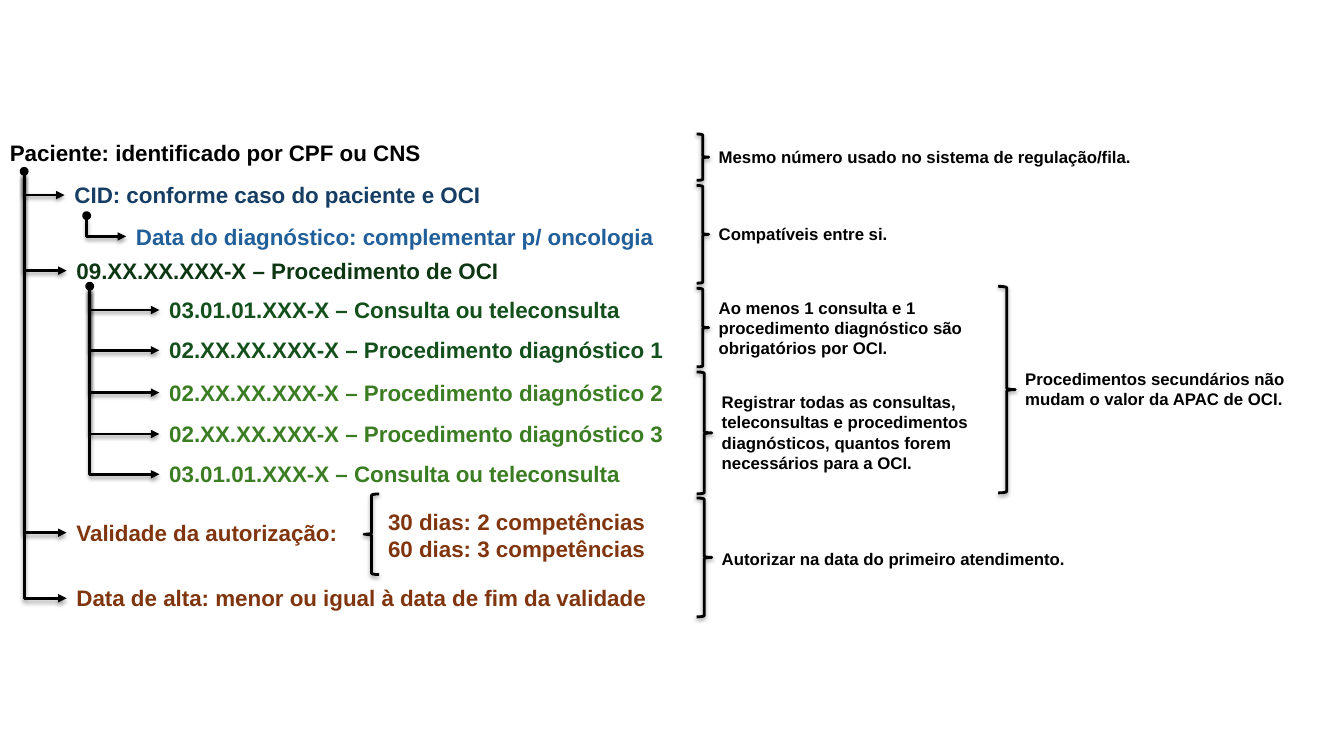
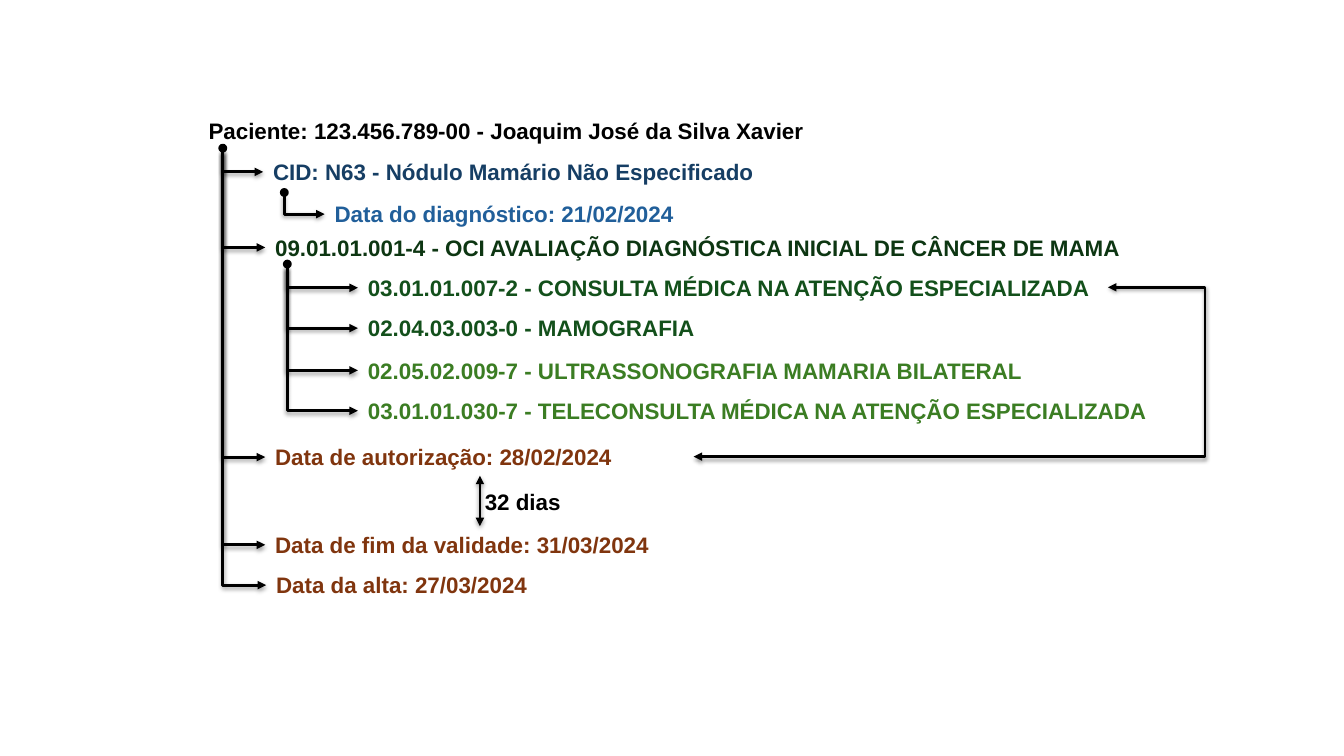
from dataclasses import dataclass

from lxml import etree
from pptx import Presentation
from pptx import util as u
from pptx.dml.color import RGBColor
from pptx.enum import shapes, text
from pptx.oxml.ns import qn

PX = 9144
FONT = "Arial"
DOT = 6
BOTTOM_OF_DOT, LEFT_SIDE, RIGHT_SIDE = 4, 1, 3

BLACK = RGBColor(0x00, 0x00, 0x00)
NAVY = RGBColor(0x16, 0x3E, 0x64)
BLUE = RGBColor(0x21, 0x5F, 0x9A)
DEEP_GREEN = RGBColor(0x0D, 0x36, 0x12)
GREEN = RGBColor(0x13, 0x50, 0x1B)
LIGHT_GREEN = RGBColor(0x3B, 0x7D, 0x23)
BROWN = RGBColor(0x80, 0x35, 0x0E)


@dataclass(frozen=True)
class Label:
    text: str
    x: int
    y: int
    w: int
    color: RGBColor
    wrap: bool = False


@dataclass(frozen=True)
class Branch:
    x: int
    y: int
    labels: tuple[Label, ...]


@dataclass(frozen=True)
class Note:
    text: str
    x: int
    y: int
    w: int
    h: int
    brace_y: int
    brace_w: int
    brace_h: int


def emu(px: float) -> u.Emu:
    return u.Emu(round(px * PX))


def add_text(s, content: str, *, x: int, y: int, w: int, h: int = 37,
             size: int = 16, color: RGBColor = BLACK, wrap: bool = False):
    sp = s.shapes.add_textbox(emu(x), emu(y), emu(w), emu(h))
    tf = sp.text_frame
    tf.word_wrap = wrap
    tf.auto_size = text.MSO_AUTO_SIZE.SHAPE_TO_FIT_TEXT
    for i, line in enumerate(content.split("\n")):
        p = tf.paragraphs[0] if i == 0 else tf.add_paragraph()
        r = p.add_run()
        r.text = line
        r.font.name = FONT
        r.font.size = u.Pt(size)
        r.font.bold = True
        r.font.color.rgb = color
    return sp


def add_label(s, label: Label):
    return add_text(s, label.text, x=label.x, y=label.y, w=label.w,
                    color=label.color, wrap=label.wrap)


def ink(sp) -> None:
    sp.line.color.rgb = BLACK
    sp.line.width = u.Pt(2)


def add_shadow(sp) -> None:
    effects = etree.SubElement(sp._element.spPr, qn("a:effectLst"))
    shadow = etree.SubElement(
        effects, qn("a:outerShdw"), blurRad=str(u.Pt(3.1)),
        dist=str(u.Pt(1.6)), dir="5400000", rotWithShape="0")
    color = etree.SubElement(shadow, qn("a:srgbClr"), val=str(BLACK))
    etree.SubElement(color, qn("a:alpha"), val="38000")


def add_arrow(s, kind, x1: float, y1: float, x2: float, y2: float,
              both_ends: bool = False):
    c = s.shapes.add_connector(kind, emu(x1), emu(y1), emu(x2), emu(y2))
    ink(c)
    ln = c._element.spPr.get_or_add_ln()
    for tag in ("a:headEnd", "a:tailEnd") if both_ends else ("a:tailEnd",):
        etree.SubElement(ln, qn(tag), type="triangle")
    add_shadow(c)
    return c


def glue(c, start, start_site: int, end, end_site: int) -> None:
    links = c._element.find(qn("p:nvCxnSpPr")).find(qn("p:cNvCxnSpPr"))
    for tag, sp, site in (("a:stCxn", start, start_site),
                          ("a:endCxn", end, end_site)):
        etree.SubElement(links, qn(tag), id=str(sp.shape_id), idx=str(site))


def add_corner_arrow(s, x1: float, y1: float, x2: float, y2: float):
    cx, cy = (x1 + x2) / 2, (y1 + y2) / 2
    half_w, half_h = (y2 - y1) / 2, (x2 - x1) / 2
    c = add_arrow(s, shapes.MSO_CONNECTOR.ELBOW, cx + half_w, cy - half_h,
                  cx - half_w, cy + half_h)
    spPr = c._element.spPr
    spPr.find(qn("a:xfrm")).set("rot", "16200000")
    spPr.find(qn("a:prstGeom")).set("prst", "bentConnector2")
    return c


def add_branch(s, branch: Branch) -> list:
    dot = s.shapes.add_shape(shapes.MSO_SHAPE.OVAL, emu(branch.x),
                             emu(branch.y), emu(DOT), emu(DOT))
    dot.fill.solid()
    dot.fill.fore_color.rgb = BLACK
    ink(dot)
    dot.shadow.inherit = False
    boxes = []
    for label in branch.labels:
        box = add_label(s, label)
        c = add_corner_arrow(s, branch.x + DOT / 2, branch.y + DOT,
                             label.x, label.y + 18.5)
        glue(c, dot, BOTTOM_OF_DOT, box, LEFT_SIDE)
        boxes.append(box)
    return boxes


def add_brace(s, x: int, y: int, w: int, h: int, rotation: int = 0) -> None:
    sp = s.shapes.add_shape(shapes.MSO_SHAPE.RIGHT_BRACE, emu(x), emu(y),
                            emu(w), emu(h))
    sp.rotation = rotation
    sp.fill.background()
    ink(sp)
    add_shadow(sp)


def add_note(s, note: Note) -> None:
    add_brace(s, note.x - note.brace_w, note.brace_y, note.brace_w,
              note.brace_h)
    add_text(s, note.text, x=note.x, y=note.y, w=note.w, h=note.h, size=12,
             wrap=True)


RULES_BRANCHES = (
    Branch(21, 167, (
        Label("CID: conforme caso do paciente e OCI", 64, 175, 428, NAVY),
        Label("09.XX.XX.XXX-X – Procedimento de OCI", 66, 250, 444, DEEP_GREEN),
        Label("Validade da autorização:", 66, 510, 282, BROWN),
        Label("Data de alta: menor ou igual à data de fim da validade",
              66, 575, 593, BROWN),
    )),
    Branch(83, 211, (
        Label("Data do diagnóstico: complementar p/ oncologia",
              125, 216, 540, BLUE),
    )),
    Branch(86, 281, (
        Label("03.01.01.XXX-X – Consulta ou teleconsulta", 158, 289, 473, GREEN),
        Label("02.XX.XX.XXX-X – Procedimento diagnóstico 1",
              158, 329, 516, GREEN),
        Label("02.XX.XX.XXX-X – Procedimento diagnóstico 2",
              158, 371, 516, LIGHT_GREEN),
        Label("02.XX.XX.XXX-X – Procedimento diagnóstico 3",
              158, 412, 516, LIGHT_GREEN),
        Label("03.01.01.XXX-X – Consulta ou teleconsulta",
              158, 452, 473, LIGHT_GREEN),
    )),
)

RULES_NOTES = (
    Note("Mesmo número usado no sistema de regulação/fila.",
         703, 141, 453, 30, 133, 12, 46),
    Note("Compatíveis entre si.", 703, 217, 301, 30, 184, 12, 97),
    Note("Ao menos 1 consulta e 1 procedimento diagnóstico são obrigatórios "
         "por OCI.", 703, 290, 301, 71, 286, 12, 78),
    Note("Registrar todas as consultas, teleconsultas e procedimentos "
         "diagnósticos, quantos forem necessários para a OCI.",
         706, 384, 301, 91, 369, 15, 121),
    Note("Autorizar na data do primeiro atendimento.",
         706, 539, 362, 30, 494, 15, 118),
    Note("Procedimentos secundários não mudam o valor da APAC de OCI.",
         1007, 361, 316, 50, 284, 17, 205),
)

CASE_MAIN = Branch(218, 144, (
    Label("CID: N63 - Nódulo Mamário Não Especificado", 261, 152, 503, NAVY),
    Label("09.01.01.001-4 - OCI AVALIAÇÃO DIAGNÓSTICA INICIAL DE CÂNCER DE MAMA",
          263, 227, 868, DEEP_GREEN),
    Label("Data de autorização: 28/02/2024", 263, 435, 426, BROWN, True),
    Label("Data de fim da validade: 31/03/2024", 263, 522, 426, BROWN, True),
    Label("Data da alta: 27/03/2024", 264, 562, 425, BROWN, True),
))
CASE_DIAGNOSIS = Branch(279, 188, (
    Label("Data do diagnóstico: 21/02/2024", 322, 194, 361, BLUE),
))
CASE_PROCEDURES = Branch(282, 259, (
    Label("03.01.01.007-2 - CONSULTA MÉDICA NA ATENÇÃO ESPECIALIZADA",
          355, 267, 744, GREEN),
    Label("02.04.03.003-0 - MAMOGRAFIA", 355, 307, 348, GREEN),
    Label("02.05.02.009-7 - ULTRASSONOGRAFIA MAMARIA BILATERAL",
          355, 349, 677, LIGHT_GREEN),
    Label("03.01.01.030-7 - TELECONSULTA MÉDICA NA ATENÇÃO ESPECIALIZADA",
          355, 389, 801, LIGHT_GREEN),
))


def build_rules(s) -> None:
    add_label(s, Label("Paciente: identificado por CPF ou CNS",
                       0, 133, 433, BLACK))
    for branch in RULES_BRANCHES:
        add_branch(s, branch)
    add_brace(s, 361, 490, 15, 80, rotation=180)
    add_text(s, "30 dias: 2 competências\n60 dias: 3 competências",
             x=375, y=499, w=278, h=64, color=BROWN)
    for note in RULES_NOTES:
        add_note(s, note)


def build_case(s) -> None:
    add_label(s, Label("Paciente: 123.456.789-00 - Joaquim José da Silva Xavier",
                       197, 111, 618, BLACK))
    main_boxes = add_branch(s, CASE_MAIN)
    add_branch(s, CASE_DIAGNOSIS)
    procedure_boxes = add_branch(s, CASE_PROCEDURES)

    c = add_arrow(s, shapes.MSO_CONNECTOR.ELBOW, 1099, 285, 688, 453,
                  both_ends=True)
    geometry = c._element.spPr.find(qn("a:prstGeom"))
    etree.SubElement(geometry.find(qn("a:avLst")), qn("a:gd"),
                     name="adj1", fmla="val -23400")
    glue(c, procedure_boxes[0], RIGHT_SIDE, main_boxes[2], RIGHT_SIDE)

    add_arrow(s, shapes.MSO_CONNECTOR.STRAIGHT, 476, 472, 476, 522,
              both_ends=True)
    add_text(s, "32 dias", x=471, y=479, w=96)


def main() -> None:
    prs = Presentation()
    prs.slide_width, prs.slide_height = u.Inches(13.33), u.Inches(7.5)
    for build in (build_rules, build_case):
        build(prs.slides.add_slide(prs.slide_layouts[6]))
    prs.save("out.pptx")


if __name__ == "__main__":
    main()
